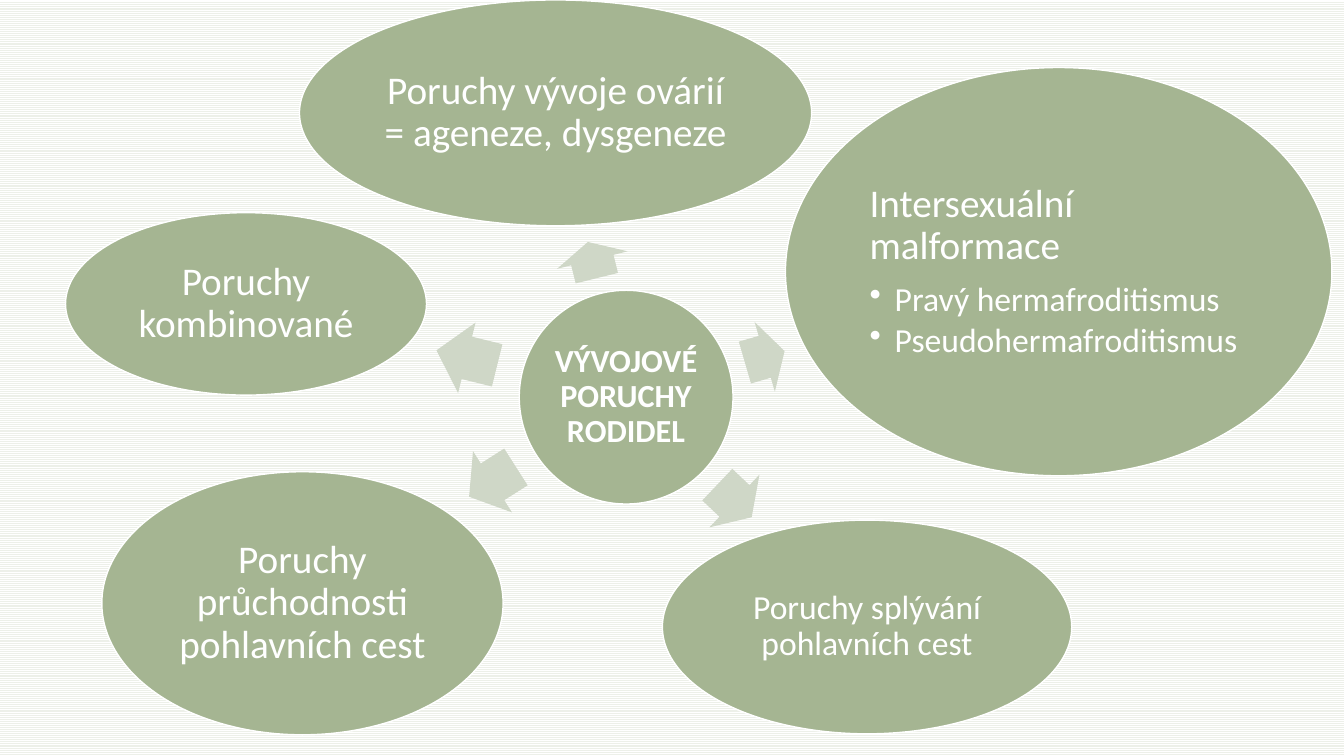
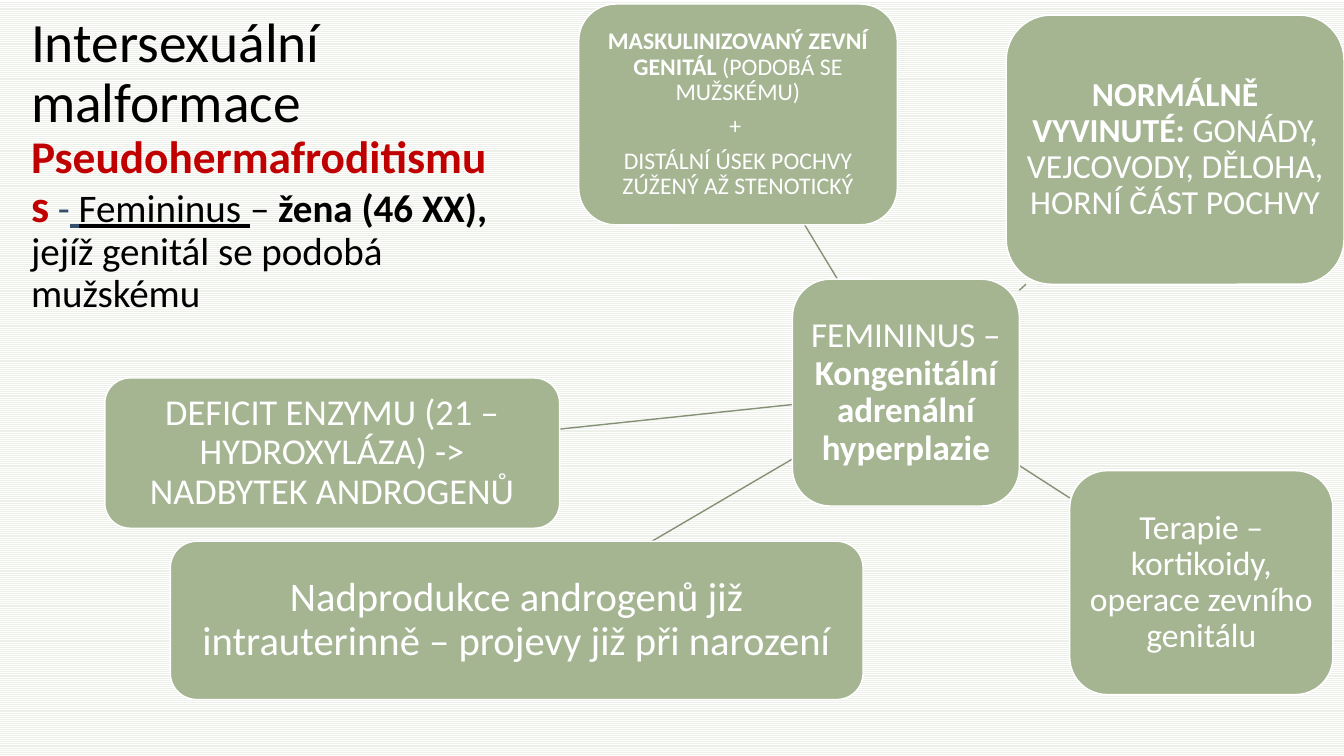
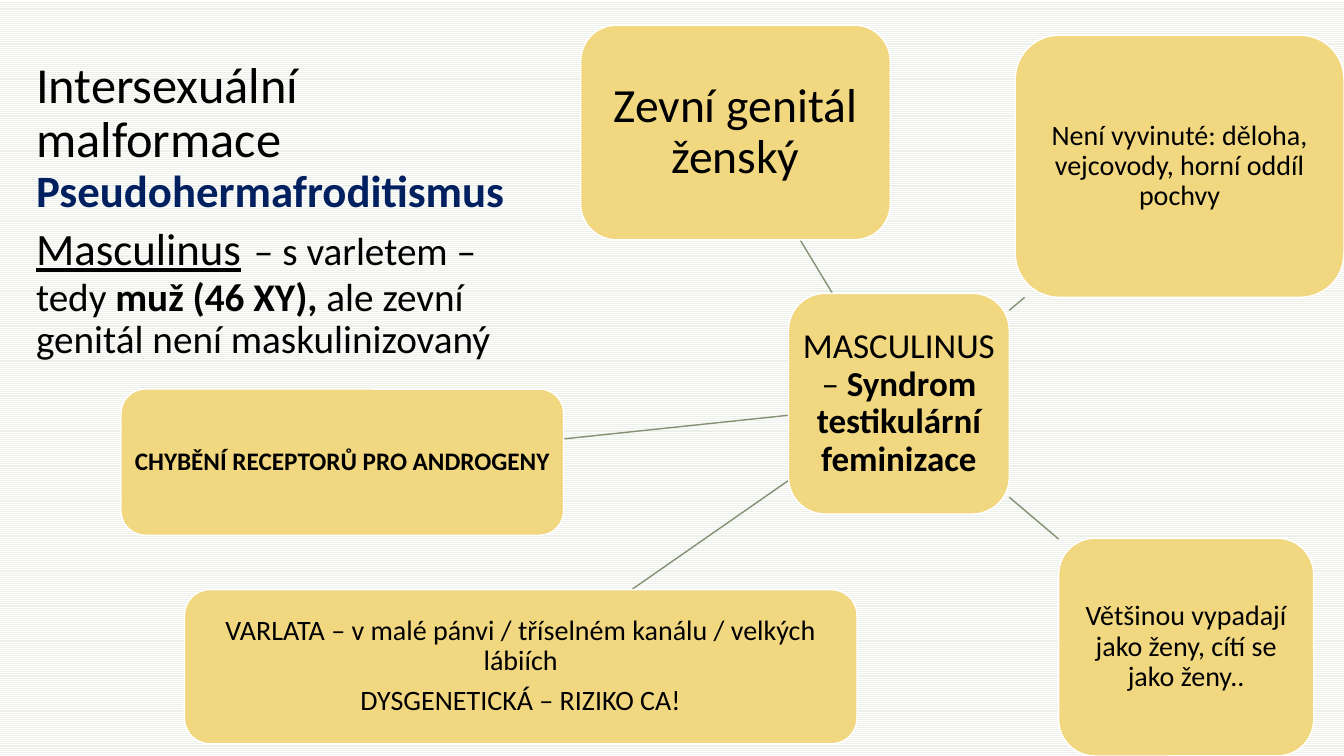
import pptx
import pptx.dml.color
import pptx.enum.dml
import pptx.enum.shapes
import pptx.enum.text
import pptx.oxml.ns
import pptx.util
from lxml import etree

Inches = pptx.util.Inches
Pt = pptx.util.Pt
RGBColor = pptx.dml.color.RGBColor
SHAPES = pptx.enum.shapes.MSO_SHAPE
ALIGN = pptx.enum.text.PP_ALIGN
ANCHOR = pptx.enum.text.MSO_ANCHOR

SAGE = RGBColor(0xA5, 0xB5, 0x92)
PALE_SAGE = RGBColor(0xCF, 0xD7, 0xC7)
SPOKE = RGBColor(0x84, 0x91, 0x75)
STRIPE = RGBColor(0xED, 0xF0, 0xE9)
SAND = RGBColor(0xF1, 0xD7, 0x7F)
WHITE = RGBColor(0xFF, 0xFF, 0xFF)
BLACK = RGBColor(0, 0, 0)
RED = RGBColor(0xC0, 0, 0)
NAVY = RGBColor(0, 0x20, 0x60)
SLATE = RGBColor(0x34, 0x4E, 0x6D)
FONT = "Calibri"


def set_stripes(master):
    fill = master.background.fill
    fill.patterned()
    fill.pattern = pptx.enum.dml.MSO_PATTERN.LIGHT_HORIZONTAL
    fill.fore_color.rgb = STRIPE
    fill.back_color.rgb = WHITE


def set_insets(frame, inset):
    frame.margin_left = frame.margin_right = Inches(inset)
    frame.margin_top = frame.margin_bottom = Inches(inset)


def style_paragraph(paragraph, size, color, bold=False, align=ALIGN.CENTER, after=0.35):
    paragraph.alignment = align
    paragraph.line_spacing = 0.9
    paragraph.space_after = Pt(round(size * after, 2))
    paragraph.font.name = FONT
    paragraph.font.size = Pt(size)
    paragraph.font.color.rgb = color
    if bold:
        paragraph.font.bold = True


def add_bullet(paragraph):
    paragraph.level = 1
    props = paragraph._p.get_or_add_pPr()
    props.set("marL", str(Inches(0.25)))
    props.set("indent", str(Inches(-0.25)))
    bullet = etree.SubElement(props, pptx.oxml.ns.qn("a:buChar"))
    bullet.set("char", "•")


def add_panel(slide, kind, box, fill, inset):
    panel = slide.shapes.add_shape(kind, *map(Inches, box))
    panel.shadow.inherit = False
    panel.fill.solid()
    panel.fill.fore_color.rgb = fill
    panel.line.color.rgb = WHITE
    panel.line.width = Pt(1)
    frame = panel.text_frame
    frame.word_wrap = True
    frame.vertical_anchor = ANCHOR.MIDDLE
    set_insets(frame, inset)
    return frame


def write_paragraphs(frame, paragraphs, size, color):
    for index, runs in enumerate(paragraphs):
        paragraph = frame.paragraphs[0] if index == 0 else frame.add_paragraph()
        all_bold = all(bold for _, bold in runs)
        style_paragraph(paragraph, size, color, all_bold)
        for text, bold in runs:
            run = paragraph.add_run()
            run.text = text
            if bold and not all_bold:
                run.font.bold = True


def plain(text):
    return [[(text, False)]]


def strong(text):
    return [[(text, True)]]


def add_bubble(slide, box, size, paragraphs, inset=0.04):
    frame = add_panel(slide, SHAPES.OVAL, box, SAGE, inset)
    write_paragraphs(frame, paragraphs, size, WHITE)


def add_intersex_bubble(slide, box):
    frame = add_panel(slide, SHAPES.OVAL, box, SAGE, 0.04)
    heading = frame.paragraphs[0]
    heading.text = "Intersexuální malformace"
    style_paragraph(heading, 28, WHITE, align=ALIGN.LEFT)
    for text in ("Pravý hermafroditismus", "Pseudohermafroditismus"):
        item = frame.add_paragraph()
        item.text = text
        add_bullet(item)
        style_paragraph(item, 24, WHITE, align=ALIGN.LEFT, after=0.15)


def add_arrow(slide, left, top, width, rotation):
    arrow = slide.shapes.add_shape(
        SHAPES.RIGHT_ARROW, Inches(left), Inches(top), Inches(width), Inches(0.72))
    arrow.adjustments[0] = 0.6
    arrow.adjustments[1] = 0.5
    arrow.rotation = rotation
    arrow.shadow.inherit = False
    arrow.fill.solid()
    arrow.fill.fore_color.rgb = PALE_SAGE
    arrow.line.fill.background()


def center(box):
    left, top, width, height = box
    return left + width / 2, top + height / 2


def edge_point(box, target):
    x, y = center(box)
    dx, dy = target[0] - x, target[1] - y
    reach = min(size / 2 / abs(delta)
                for size, delta in ((box[2], dx), (box[3], dy)) if delta)
    return x + dx * reach, y + dy * reach


def add_spoke(slide, hub, box):
    start = edge_point(hub, center(box))
    end = edge_point(box, center(hub))
    spoke = slide.shapes.add_connector(
        pptx.enum.shapes.MSO_CONNECTOR.STRAIGHT, *map(Inches, start + end))
    spoke.line.color.rgb = SPOKE
    spoke.line.width = Pt(1)
    etree.SubElement(spoke._element.spPr, pptx.oxml.ns.qn("a:effectLst"))


def add_spoke_diagram(slide, fill, color, hub, branches):
    hub_box = hub[0]
    for box, *_ in branches:
        add_spoke(slide, hub_box, box)
    for box, inset, size, paragraphs in [hub, *branches]:
        frame = add_panel(slide, SHAPES.ROUNDED_RECTANGLE, box, fill, inset)
        write_paragraphs(frame, paragraphs, size, color)


def add_title(slide, box, lines):
    frame = slide.shapes.add_textbox(*map(Inches, box)).text_frame
    frame.word_wrap = True
    frame.vertical_anchor = ANCHOR.MIDDLE
    paragraph = frame.paragraphs[0]
    paragraph.line_spacing = 0.9
    paragraph.font.name = FONT
    for index, runs in enumerate(lines):
        if index:
            paragraph.add_line_break()
        for text, size, color, bold, underline in runs:
            run = paragraph.add_run()
            run.text = text
            run.font.size = Pt(size)
            run.font.color.rgb = color
            run.font.bold = bold
            run.font.underline = underline


def build_overview(slide):
    for arrow in [
        (5.69, 2.22, 0.37, 256.1),
        (7.38, 3.18, 0.41, 343.8),
        (7.05, 4.61, 0.47, 43.5),
        (4.61, 4.42, 0.55, 147.5),
        (4.32, 3.19, 0.62, 193.9),
    ]:
        add_arrow(slide, *arrow)
    add_bubble(slide, (5.15, 2.88, 2.12, 2.12), 23, strong("VÝVOJOVÉ PORUCHY RODIDEL"), 0.03)
    add_bubble(slide, (2.97, 0, 5.08, 2.24), 28,
               plain("Poruchy vývoje ovárií = ageneze, dysgeneze"))
    add_intersex_bubble(slide, (7.79, 0.67, 5.42, 4.05))
    add_bubble(slide, (6.57, 5.16, 4.06, 2.12), 24,
               plain("Poruchy splývání pohlavních cest"), 0.03)
    add_bubble(slide, (1.01, 4.68, 3.98, 2.61), 28,
               plain("Poruchy průchodnosti pohlavních cest"))
    add_bubble(slide, (0.65, 2.11, 3.58, 1.81), 28, plain("Poruchy kombinované"))


def build_femininus(slide):
    add_title(slide, (0.21, 0.13, 4.76, 3.02), [
        [("Intersexuální malformace", 39.6, BLACK, False, False)],
        [("Pseudohermafroditismus", 32.4, RED, True, False),
         (" -", 27.9, SLATE, False, False),
         (" ", 27.9, SLATE, False, True),
         ("Femininus ", 27.9, BLACK, False, True),
         ("– ", 27.9, BLACK, False, False),
         ("žena (46 XX), ", 27.9, BLACK, True, False),
         ("jejíž genitál se podobá mužskému", 27.9, BLACK, False, False)],
    ])
    hub = ((7.86, 2.77, 2.25, 2.25), 0.07, 25,
           [[("FEMININUS – ", False), ("Kongenitální adrenální hyperplazie", True)]])
    add_spoke_diagram(slide, SAGE, WHITE, hub, [
        ((5.74, 0.04, 3.16, 2.19), 0.05, 17,
         [[("MASKULINIZOVANÝ ZEVNÍ GENITÁL ", True), ("(PODOBÁ SE MUŽSKÉMU)", False)],
          [("+ ", False)],
          [("DISTÁLNÍ ÚSEK POCHVY ZÚŽENÝ AŽ STENOTICKÝ", False)]]),
        ((9.98, 0.15, 3.35, 2.67), 0.07, 24,
         [[("NORMÁLNĚ VYVINUTÉ: ", True),
           ("GONÁDY, VEJCOVODY, DĚLOHA, HORNÍ ČÁST POCHVY", False)]]),
        ((10.61, 4.67, 2.61, 2.22), 0.07, 24,
         plain("Terapie – kortikoidy, operace zevního genitálu")),
        ((1.69, 5.37, 6.87, 1.57), 0.08, 29,
         plain("Nadprodukce androgenů již intrauterinně – projevy již při narození")),
        ((1.04, 3.75, 4.51, 1.49), 0.07, 26,
         plain("DEFICIT ENZYMU (21 – HYDROXYLÁZA) -> NADBYTEK ANDROGENŮ")),
    ])


def build_masculinus(slide):
    add_title(slide, (0.26, 0.21, 5.2, 3.77), [
        [("Intersexuální malformace", 36, BLACK, False, False)],
        [("Pseudohermafroditismus ", 32, NAVY, True, False)],
        [("Masculinus", 32, BLACK, False, True),
         (" ", 40, BLACK, False, False),
         ("– s varletem – tedy ", 28, BLACK, False, False),
         ("muž (46 XY), ", 28, BLACK, True, False),
         ("ale zevní genitál není maskulinizovaný", 28, BLACK, False, False)],
    ])
    hub = ((7.82, 2.91, 2.19, 2.19), 0.03, 25,
           [[("MASCULINUS – ", False), ("Syndrom testikulární feminizace", True)]])
    add_spoke_diagram(slide, SAND, BLACK, hub, [
        ((5.76, 0.25, 3.07, 2.13), 0.09, 34, plain("Zevní genitál ženský")),
        ((10.07, 0.35, 3.26, 2.6), 0.03, 20,
         plain("Není vyvinuté: děloha, vejcovody, horní oddíl pochvy")),
        ((10.5, 5.34, 2.53, 2.16), 0.03, 20,
         plain("Většinou vypadají jako ženy, cítí se jako ženy..")),
        ((1.83, 5.85, 6.67, 1.53), 0.03, 20,
         plain("VARLATA – v malé pánvi / tříselném kanálu / velkých lábiích")
         + plain("DYSGENETICKÁ – RIZIKO CA!")),
        ((1.2, 3.86, 4.39, 1.45), 0.03, 18, strong("CHYBĚNÍ RECEPTORŮ PRO ANDROGENY")),
    ])


def main():
    deck = pptx.Presentation()
    deck.slide_width = Inches(13.33)
    deck.slide_height = Inches(7.5)
    set_stripes(deck.slide_master)
    for build in (build_overview, build_femininus, build_masculinus):
        build(deck.slides.add_slide(deck.slide_layouts[6]))
    deck.save("out.pptx")


if __name__ == "__main__":
    main()
